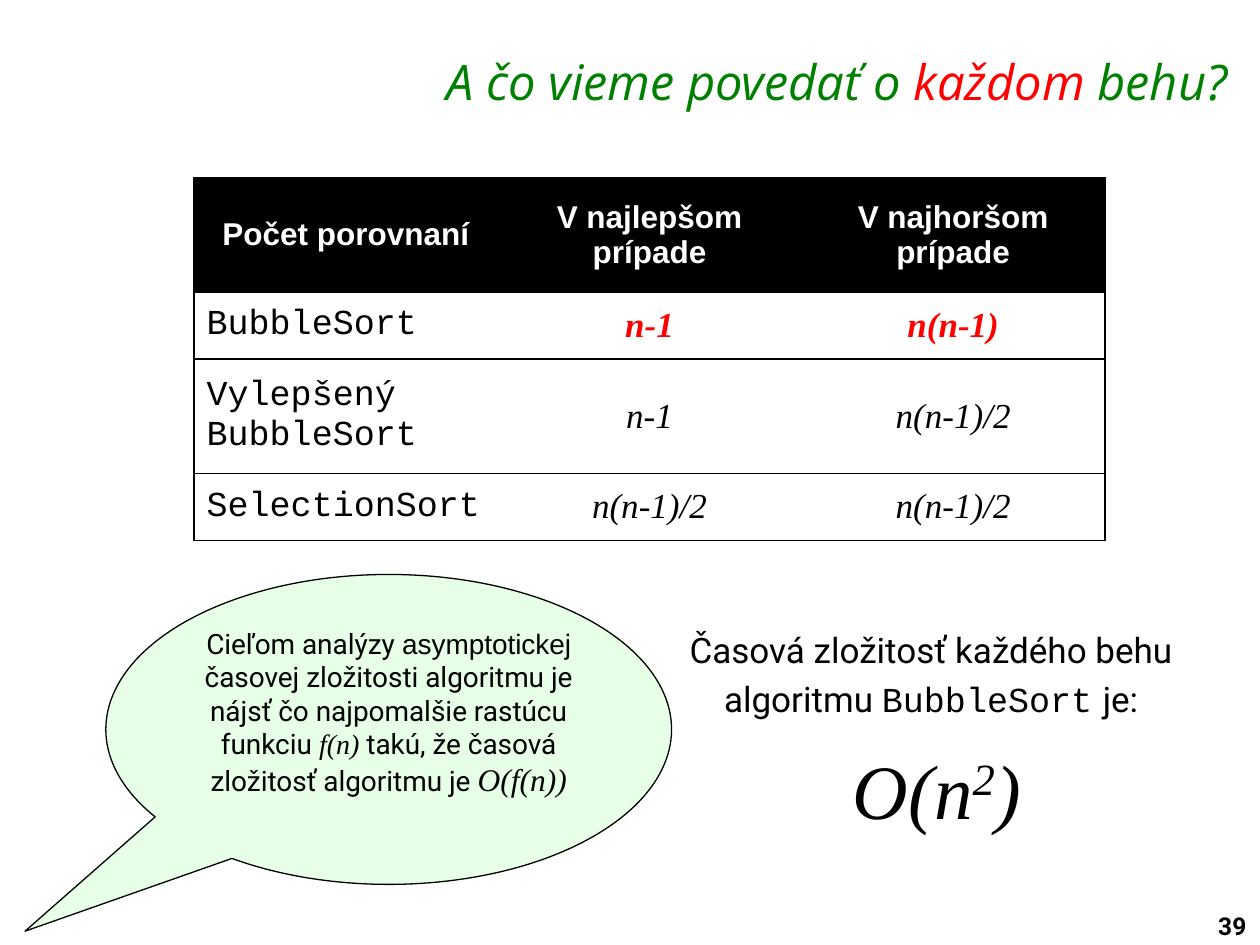
from lxml.etree import SubElement
from pptx import Presentation
from pptx.dml.color import RGBColor
from pptx.enum.shapes import MSO_SHAPE
from pptx.enum.text import MSO_ANCHOR, PP_ALIGN
from pptx.oxml.ns import qn
from pptx.util import Inches, Pt

BLACK = RGBColor(0x00, 0x00, 0x00)
WHITE = RGBColor(0xFF, 0xFF, 0xFF)
RED = RGBColor(0xFF, 0x00, 0x00)
GREEN = RGBColor(0x00, 0x80, 0x00)
PALE_GREEN = RGBColor(0xE7, 0xFF, 0xE7)
SANS, MONO, MATH = "Roboto", "Courier New", "Times New Roman"


def add_run(paragraph, text, font_name, size, color=BLACK, bold=False, italic=False):
    run = paragraph.add_run()
    run.text = text
    run.font.name = font_name
    run.font.size = Pt(size)
    run.font.color.rgb = color
    run.font.bold = bold
    run.font.italic = italic
    return run


def set_border(cell, side, visible):
    line = SubElement(cell._tc.get_or_add_tcPr(), qn(f"a:ln{side}"), w=str(Pt(0.75)))
    if visible:
        fill = SubElement(line, qn("a:solidFill"))
        SubElement(fill, qn("a:srgbClr"), val=str(BLACK))
    else:
        SubElement(line, qn("a:noFill"))


presentation = Presentation()
presentation.slide_width = Inches(10)
presentation.slide_height = Inches(7.5)
slide = presentation.slides.add_slide(presentation.slide_layouts[5])

title = slide.shapes.title
title.left, title.top = Inches(2.29), Inches(0.35)
title.width, title.height = Inches(7.55), Inches(0.58)
title.text_frame.vertical_anchor = MSO_ANCHOR.MIDDLE
paragraph = title.text_frame.paragraphs[0]
paragraph.alignment = PP_ALIGN.RIGHT
for text, color in [("A čo vieme povedať o ", GREEN), ("každom", RED), (" behu?", GREEN)]:
    add_run(paragraph, text, "Open Sans", 28, color, italic=True)

comparisons = [
    ("Počet porovnaní", "V najlepšom prípade", "V najhoršom prípade"),
    ("BubbleSort", "n-1", "n(n-1)"),
    ("Vylepšený BubbleSort", "n-1", "n(n-1)/2"),
    ("SelectionSort", "n(n-1)/2", "n(n-1)/2"),
]
table = slide.shapes.add_table(
    4, 3, Inches(1.54), Inches(1.41), Inches(7.23), Inches(2.88)
).table
for column in table.columns:
    column.width = Inches(2.41)
for row, height in zip(table.rows, [0.91, 0.53, 0.91, 0.53]):
    row.height = Inches(height)
for row_index, values in enumerate(comparisons):
    for column_index, text in enumerate(values):
        cell = table.cell(row_index, column_index)
        cell.vertical_anchor = MSO_ANCHOR.MIDDLE
        set_border(cell, "L", column_index == 0)
        set_border(cell, "R", column_index == 2)
        set_border(cell, "T", True)
        set_border(cell, "B", True)
        cell.fill.solid()
        cell.fill.fore_color.rgb = BLACK if row_index == 0 else WHITE
        paragraph = cell.text_frame.paragraphs[0]
        paragraph.alignment = PP_ALIGN.CENTER
        if row_index == 0:
            add_run(paragraph, text, "Arial", 18, WHITE, bold=True)
        elif column_index == 0:
            paragraph.alignment = PP_ALIGN.LEFT
            add_run(paragraph, text, MONO, 20)
        else:
            highlighted = row_index == 1
            color = RED if highlighted else BLACK
            add_run(paragraph, text, MATH, 20, color, bold=highlighted, italic=True)

statement = slide.shapes.add_textbox(Inches(5.32), Inches(4.94), Inches(4.14), Inches(0.84))
statement.text_frame.word_wrap = True
paragraph = statement.text_frame.paragraphs[0]
paragraph.alignment = PP_ALIGN.CENTER
add_run(paragraph, "Časová zložitosť každého behu algoritmu ", SANS, 20)
add_run(paragraph, "BubbleSort", MONO, 20)
add_run(paragraph, " ", SANS, 24)
add_run(paragraph, "je:", SANS, 20)

complexity = slide.shapes.add_textbox(Inches(6.67), Inches(5.84), Inches(1.74), Inches(0.84))
paragraph = complexity.text_frame.paragraphs[0]
add_run(paragraph, "O(n", MATH, 44, italic=True)
exponent = add_run(paragraph, "2", MATH, 44, italic=True)
exponent._r.get_or_add_rPr().set("baseline", "30000")
add_run(paragraph, ")", MATH, 44, italic=True)

callout = slide.shapes.add_shape(
    MSO_SHAPE.OVAL_CALLOUT, Inches(0.84), Inches(4.56), Inches(4.49), Inches(2.46)
)
callout.adjustments[0] = -0.643
callout.adjustments[1] = 0.651
callout.shadow.inherit = False
callout.fill.solid()
callout.fill.fore_color.rgb = PALE_GREEN
callout.line.color.rgb = BLACK
callout.line.width = Pt(0.75)
callout.text_frame.word_wrap = True
callout.text_frame.vertical_anchor = MSO_ANCHOR.TOP
paragraph = callout.text_frame.paragraphs[0]
paragraph.alignment = PP_ALIGN.CENTER
add_run(paragraph, "Cieľom analýzy ", SANS, 16)
add_run(paragraph, "asymptotickej ", "Arial", 16)
add_run(paragraph, "časovej zložitosti algoritmu je nájsť čo najpomalšie rastúcu funkciu ", SANS, 16)
add_run(paragraph, "f(n) ", MATH, 16, italic=True)
add_run(paragraph, "takú, že časová zložitosť algoritmu je ", SANS, 16)
add_run(paragraph, "O(f(n))", MATH, 18, italic=True)

page_number = slide.shapes.add_textbox(Inches(9.57), Inches(7.18), Inches(0.51), Inches(0.33))
add_run(page_number.text_frame.paragraphs[0], "39", SANS, 14, bold=True)

presentation.save("out.pptx")
